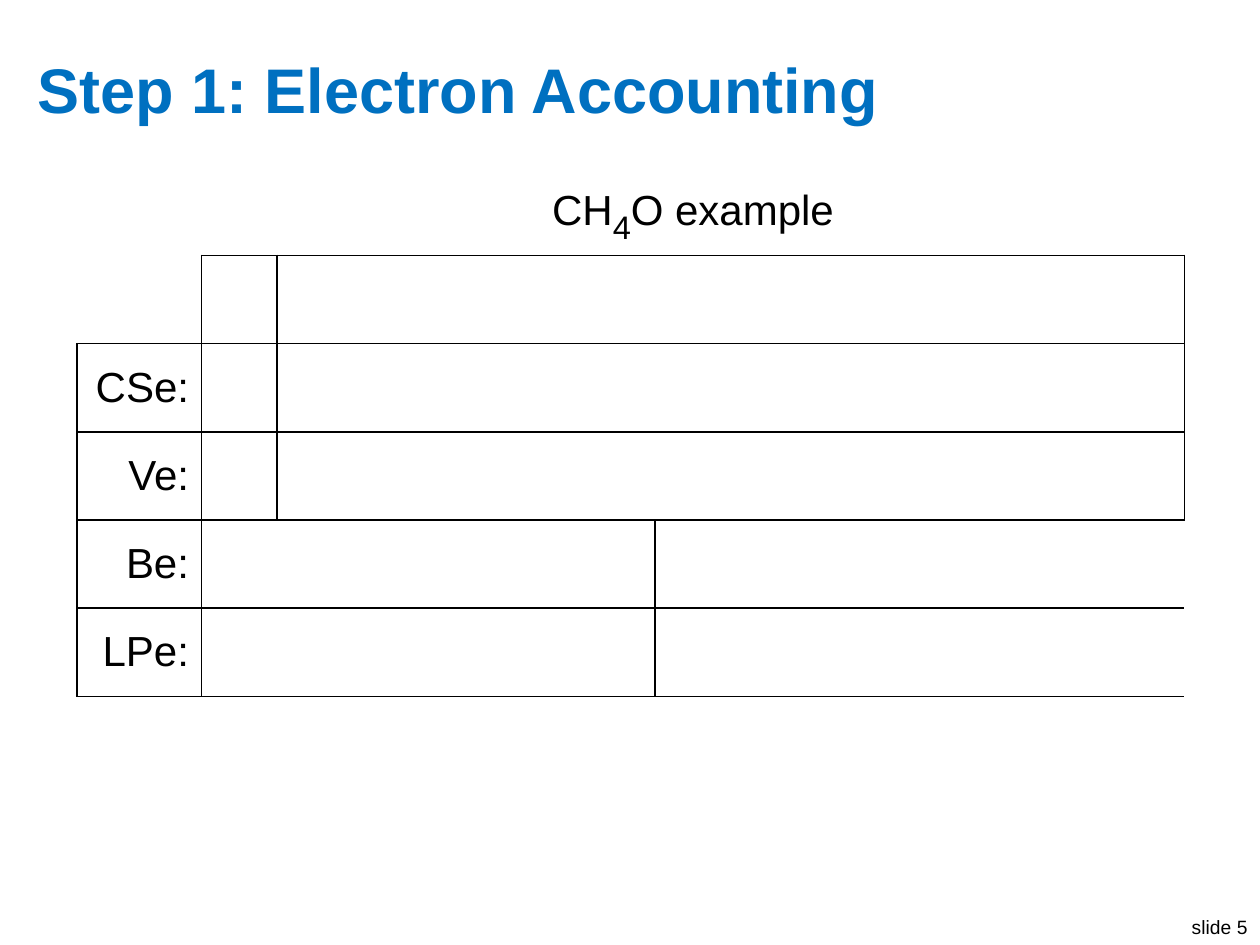
from lxml.etree import SubElement
from pptx import Presentation
from pptx.dml.color import RGBColor
from pptx.enum.text import MSO_ANCHOR, PP_ALIGN
from pptx.oxml.ns import qn
from pptx.util import Pt

BLACK = RGBColor(0x00, 0x00, 0x00)
BLUE = RGBColor(0x00, 0x70, 0xC0)
WHITE = RGBColor(0xFF, 0xFF, 0xFF)
FONT = "Arial"
NO_STYLE = "{2D5ABB26-0587-4C30-8999-92F81FD0307C}"
COLUMNS = 14
ROWS = 6
LAST = COLUMNS - 1
SPLIT = 6


class SlideBuilder:
    def __init__(self, slide):
        self.s = slide

    def style(self, p, size, color=BLACK, bold=False, align=PP_ALIGN.LEFT):
        p.alignment = align
        p.font.name = FONT
        p.font.size = Pt(size)
        p.font.bold = bold
        p.font.color.rgb = color

    def text(self, x, y, w, h, text, size, wrap=True, **style):
        sp = self.s.shapes.add_textbox(Pt(x), Pt(y), Pt(w), Pt(h))
        tf = sp.text_frame
        tf.word_wrap = wrap
        tf.vertical_anchor = MSO_ANCHOR.MIDDLE
        p = tf.paragraphs[0]
        p.text = text
        self.style(p, size, **style)

    def table(self, x, y, widths, heights):
        frame = self.s.shapes.add_table(len(heights), len(widths), Pt(x), Pt(y),
                                        Pt(sum(widths)), Pt(sum(heights)))
        table = frame.table
        table.first_row = table.horz_banding = False
        table._tbl.tblPr.find(qn("a:tableStyleId")).text = NO_STYLE
        for column, width in zip(table.columns, widths):
            column.width = Pt(width)
        for row, height in zip(table.rows, heights):
            row.height = Pt(height)
        return table

    def border(self, cell, side):
        ln = SubElement(cell._tc.get_or_add_tcPr(), qn(f"a:ln{side}"), w=str(Pt(1)))
        fill = SubElement(ln, qn("a:solidFill"))
        SubElement(fill, qn("a:srgbClr"), val=str(BLACK))

    def block(self, table, row, first, last, sides="LRTB", merge=False):
        for col in range(first, last + 1):
            cell = table.cell(row, col)
            for side in sides:
                if side in "TB" or (side == "L" and col == first) or (side == "R" and col == last):
                    self.border(cell, side)
            cell.fill.solid()
            cell.fill.fore_color.rgb = WHITE
        if merge:
            table.cell(row, first).merge(table.cell(row, last))

    def cell_text(self, cell, runs, align):
        cell.vertical_anchor = MSO_ANCHOR.MIDDLE
        p = cell.text_frame.paragraphs[0]
        self.style(p, 24, align=align)
        for text, subscript in runs:
            r = p.add_run()
            r.text = text
            if subscript:
                r.font.size = Pt(32)
                r._r.get_or_add_rPr().set("baseline", "-25000")


def main():
    prs = Presentation()
    prs.slide_width, prs.slide_height = Pt(720), Pt(540)
    b = SlideBuilder(prs.slides.add_slide(prs.slide_layouts[6]))

    b.text(666, 519.1, 54, 20.9, "slide 5", 11, wrap=False, align=PP_ALIGN.RIGHT)
    b.text(14.4, 21.6, 691.2, 57.6, "Step 1: Electron Accounting", 36, color=BLUE, bold=True)

    table = b.table(43.9, 95, [71.3] + [43.2] * LAST, [50.4] * ROWS)
    b.block(table, 0, 0, 0, sides="")
    b.block(table, 0, 1, LAST, sides="B", merge=True)
    b.cell_text(table.cell(0, 1), [("CH", False), ("4", True), ("O example", False)],
                PP_ALIGN.CENTER)

    b.block(table, 1, 0, 0, sides="RB")
    for row in (1, 2, 3):
        b.block(table, row, 1, LAST)
    for row in (4, 5):
        b.block(table, row, 1, SPLIT, merge=True)
        b.block(table, row, SPLIT + 1, LAST, merge=True)
    for row, label in enumerate(("CSe:", "Ve:", "Be:", "LPe:"), start=2):
        b.block(table, row, 0, 0)
        b.cell_text(table.cell(row, 0), [(label, False)], PP_ALIGN.RIGHT)

    prs.save("out.pptx")


if __name__ == "__main__":
    main()
